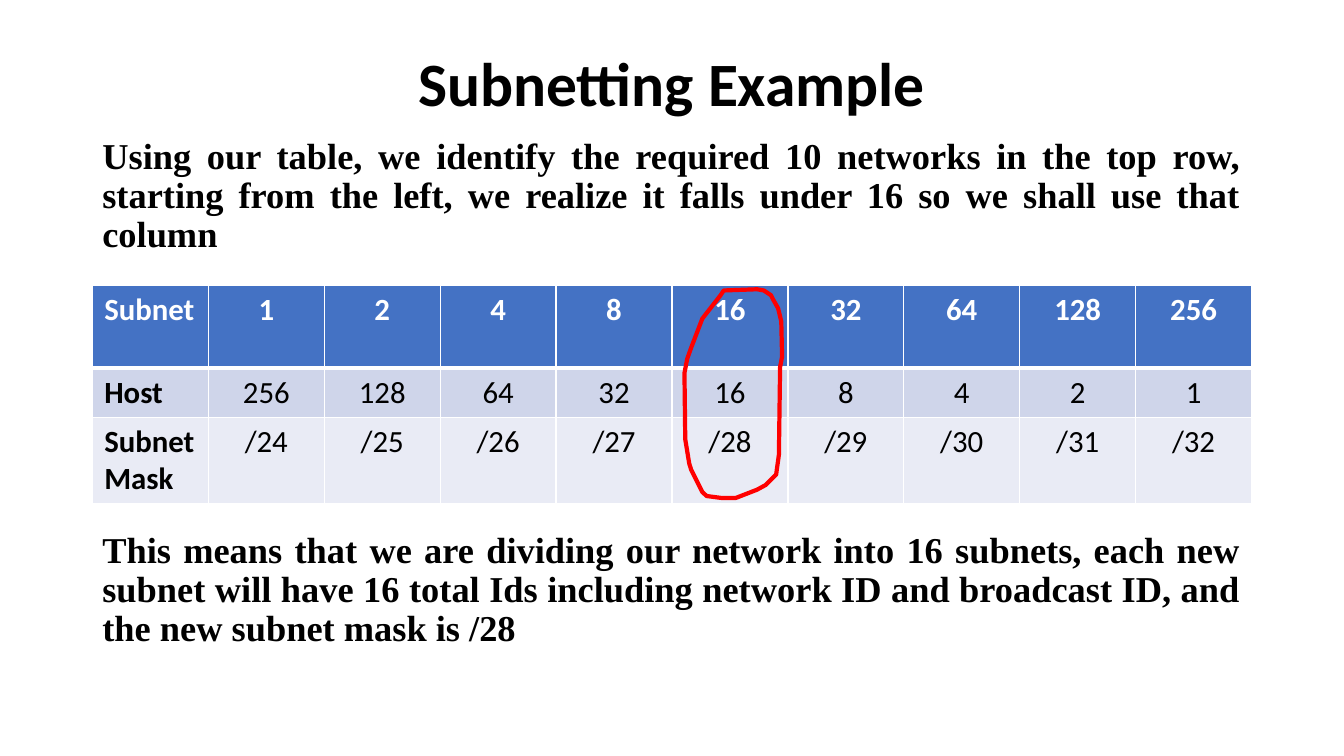
import pptx
import pptx.util
import pptx.dml.color
import pptx.enum.text
from lxml import etree
from pptx.oxml.ns import qn

Cm, Pt = pptx.util.Cm, pptx.util.Pt
ALIGN = pptx.enum.text.PP_ALIGN
ANCHOR = pptx.enum.text.MSO_ANCHOR

COLORS = {"text": "000000", "white": "FFFFFF", "header": "4472C4",
          "host": "CFD5EA", "mask": "E9EBF5", "ring": "FF0000"}
LEFT, WIDTH = Cm(2.33), Cm(29.21)
INTRO = ("Using our table, we identify the required 10 networks in the top row, "
         "starting from the left, we realize it falls under 16 so we shall use that column")
RESULT = ("This means that we are dividing our network into 16 subnets, each new subnet "
          "will have 16 total Ids including network ID and broadcast ID, "
          "and the new subnet mask is /28")
POWERS = [2 ** n for n in range(9)]
ROWS = [
    ("header", 2.1, ["Subnet", *POWERS]),
    ("host", 1.22, ["Host", *reversed(POWERS)]),
    ("mask", 2.18, ["Subnet Mask", *(f"/{24 + n}" for n in range(9))]),
]
# Hand-drawn outline around the "16" column, in hundredths of a centimetre
RING = [(1824, 732), (1816, 744), (1770, 803), (1742, 876), (1732, 904),
        (1725, 940), (1727, 1107), (1737, 1168), (1742, 1184), (1770, 1240),
        (1781, 1250), (1819, 1255), (1854, 1255), (1908, 1234), (1930, 1222),
        (1956, 1196), (1963, 1146), (1966, 925), (1971, 899), (1969, 810),
        (1961, 777), (1948, 754), (1943, 744), (1925, 732), (1908, 729)]


def rgb(name):
    return pptx.dml.color.RGBColor.from_string(COLORS[name])


def write(tf, text, size=22, font="Calibri", color="text", bold=True,
          align=ALIGN.LEFT, spacing=None):
    p = tf.paragraphs[0]
    p.alignment = align
    p.line_spacing = spacing
    r = p.add_run()
    r.text = str(text)
    r.font.size, r.font.name, r.font.bold = Pt(size), font, bold
    r.font.color.rgb = rgb(color)


def add_text(slide, top, height, text, anchor=ANCHOR.TOP, **style):
    tf = slide.shapes.add_textbox(LEFT, top, WIDTH, height).text_frame
    tf.word_wrap = True
    tf.vertical_anchor = anchor
    write(tf, text, spacing=0.9, **style)


def set_borders(cell, top, bottom):
    """Give the cell white borders; top and bottom widths are in points."""
    tcPr = cell._tc.get_or_add_tcPr()
    for side, width in (("L", 1), ("R", 1), ("T", top), ("B", bottom)):
        ln = etree.SubElement(tcPr, qn(f"a:ln{side}"), w=str(Pt(width)))
        fill = etree.SubElement(ln, qn("a:solidFill"))
        etree.SubElement(fill, qn("a:srgbClr"), val=COLORS["white"])


def add_subnet_table(slide):
    height = Cm(sum(row[1] for row in ROWS))
    table = slide.shapes.add_table(len(ROWS), 10, LEFT, Cm(7.18), WIDTH, height).table
    table.horz_banding = False
    for i, (kind, row_height, values) in enumerate(ROWS):
        table.rows[i].height = Cm(row_height)
        for j, value in enumerate(values):
            cell = table.cell(i, j)
            cell.margin_left = cell.margin_right = Cm(0.3)
            cell.margin_top = cell.margin_bottom = Cm(0.15)
            set_borders(cell, top=3 if i == 1 else 1, bottom=3 if i == 0 else 1)
            cell.fill.solid()
            cell.fill.fore_color.rgb = rgb(kind)
            write(cell.text_frame, value,
                  color="white" if i == 0 else "text",
                  bold=i == 0 or j == 0,
                  align=ALIGN.LEFT if j == 0 else ALIGN.CENTER)


def add_ring(slide):
    builder = slide.shapes.build_freeform(*RING[0], scale=Cm(0.01))
    builder.add_line_segments(RING[1:], close=True)
    sp = builder.convert_to_shape()
    sp.shadow.inherit = False
    sp.fill.background()
    sp.line.color.rgb = rgb("ring")
    sp.line.width = Pt(3)
    etree.SubElement(sp.line._get_or_add_ln(), qn("a:round"))


def main():
    prs = pptx.Presentation()
    prs.slide_width, prs.slide_height = Cm(33.87), Cm(19.05)
    slide = prs.slides.add_slide(prs.slide_layouts[6])
    add_text(slide, Cm(1.02), Cm(2.33), "Subnetting Example", size=44,
             align=ALIGN.CENTER, anchor=ANCHOR.MIDDLE)
    for top, text in ((3.35, INTRO), (13.28, RESULT)):
        add_text(slide, Cm(top), Cm(3.2), text, size=26,
                 font="Times New Roman", align=ALIGN.JUSTIFY)
    add_subnet_table(slide)
    add_ring(slide)
    prs.save("out.pptx")


if __name__ == "__main__":
    main()
